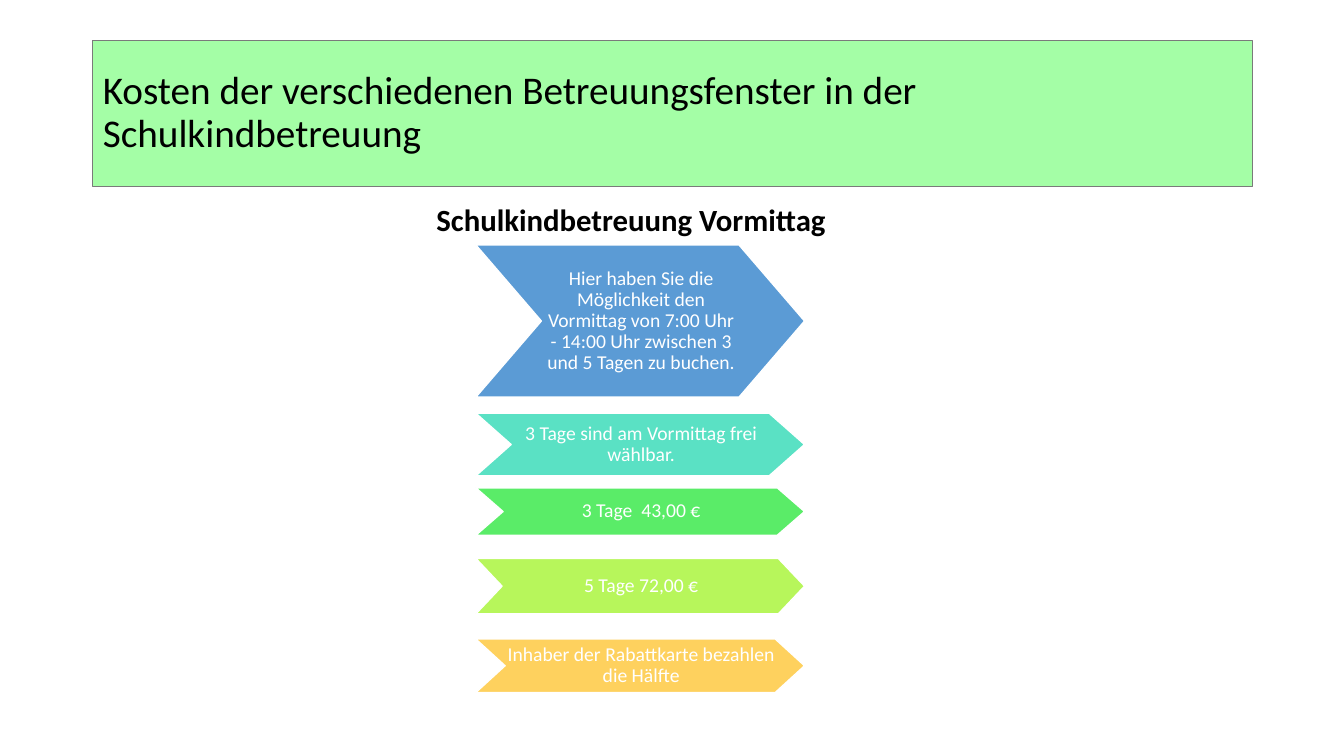
"""Build the slide on the costs of morning care for school children."""
from dataclasses import dataclass

from pptx import Presentation
from pptx.dml.color import RGBColor
from pptx.enum.shapes import MSO_SHAPE
from pptx.enum.text import MSO_ANCHOR, MSO_AUTO_SIZE, PP_ALIGN
from pptx.slide import Slide
from pptx.text.text import TextFrame
from pptx.util import Inches, Pt

FONT = "Calibri"
BLACK = RGBColor(0x00, 0x00, 0x00)
WHITE = RGBColor(0xFF, 0xFF, 0xFF)
GREY = RGBColor(0x7A, 0x7A, 0x7A)
PALE_GREEN = RGBColor(0xA4, 0xFE, 0xA6)
BLUE = RGBColor(0x5B, 0x9B, 0xD5)
TURQUOISE = RGBColor(0x5A, 0xE1, 0xC4)
GREEN = RGBColor(0x5A, 0xEC, 0x68)
LIME = RGBColor(0xB7, 0xF6, 0x5B)
YELLOW = RGBColor(0xFE, 0xD1, 0x5E)

CHEVRON_LEFT = 4.72
CHEVRON_WIDTH = 3.26


@dataclass(frozen=True)
class Chevron:
    text: str
    top: float
    height: float
    notch: float
    color: RGBColor


CHEVRONS = [
    Chevron(
        "Hier haben Sie die Möglichkeit den Vormittag von 7:00 Uhr - 14:00 Uhr "
        "zwischen 3 und 5 Tagen zu buchen.",
        2.43, 1.51, 0.65, BLUE,
    ),
    Chevron("3 Tage sind am Vormittag frei wählbar.", 4.1, 0.62, 0.35, TURQUOISE),
    Chevron("3 Tage  43,00 €", 4.84, 0.47, 0.27, GREEN),
    Chevron("5 Tage 72,00 €", 5.54, 0.55, 0.26, LIME),
    Chevron("Inhaber der Rabattkarte bezahlen die Hälfte", 6.34, 0.53, 0.29, YELLOW),
]


def write_text(
    frame: TextFrame,
    text: str,
    size: float,
    color: RGBColor,
    alignment: PP_ALIGN = PP_ALIGN.LEFT,
    line_spacing: float = 1.0,
    bold: bool = False,
) -> None:
    frame.word_wrap = True
    paragraph = frame.paragraphs[0]
    paragraph.alignment = alignment
    paragraph.line_spacing = line_spacing
    run = paragraph.add_run()
    run.text = text
    run.font.name = FONT
    run.font.size = Pt(size)
    run.font.bold = bold
    run.font.color.rgb = color


def add_title(slide: Slide, text: str) -> None:
    title = slide.shapes.title
    title.left, title.top = Inches(0.92), Inches(0.4)
    title.width, title.height = Inches(11.5), Inches(1.45)
    title.fill.solid()
    title.fill.fore_color.rgb = PALE_GREEN
    title.line.color.rgb = GREY
    title.line.width = Pt(1)
    frame = title.text_frame
    frame.auto_size = MSO_AUTO_SIZE.NONE
    frame.vertical_anchor = MSO_ANCHOR.MIDDLE
    write_text(frame, text, 28, BLACK, line_spacing=0.9)


def add_subtitle(slide: Slide, text: str) -> None:
    box = slide.shapes.add_textbox(
        Inches(4.23), Inches(1.94), Inches(4.25), Inches(0.47)
    )
    box.text_frame.auto_size = MSO_AUTO_SIZE.SHAPE_TO_FIT_TEXT
    write_text(box.text_frame, text, 22, BLACK, bold=True)


def add_chevron(slide: Slide, chevron: Chevron) -> None:
    shape = slide.shapes.add_shape(
        MSO_SHAPE.CHEVRON,
        Inches(CHEVRON_LEFT),
        Inches(chevron.top),
        Inches(CHEVRON_WIDTH),
        Inches(chevron.height),
    )
    shape.adjustments[0] = chevron.notch / chevron.height
    shape.shadow.inherit = False
    shape.fill.solid()
    shape.fill.fore_color.rgb = chevron.color
    shape.line.color.rgb = WHITE
    shape.line.width = Pt(1)
    frame = shape.text_frame
    frame.vertical_anchor = MSO_ANCHOR.MIDDLE
    frame.margin_left, frame.margin_right = Inches(0.02), Inches(0)
    frame.margin_top = frame.margin_bottom = Inches(0.01)
    write_text(frame, chevron.text, 14, WHITE, PP_ALIGN.CENTER, 0.9)


def main() -> None:
    presentation = Presentation()
    presentation.slide_width = Inches(13.33)
    presentation.slide_height = Inches(7.5)
    slide = presentation.slides.add_slide(presentation.slide_layouts[5])
    add_title(
        slide, "Kosten der verschiedenen Betreuungsfenster in der Schulkindbetreuung"
    )
    add_subtitle(slide, "Schulkindbetreuung Vormittag")
    for chevron in CHEVRONS:
        add_chevron(slide, chevron)
    presentation.save("out.pptx")


if __name__ == "__main__":
    main()
